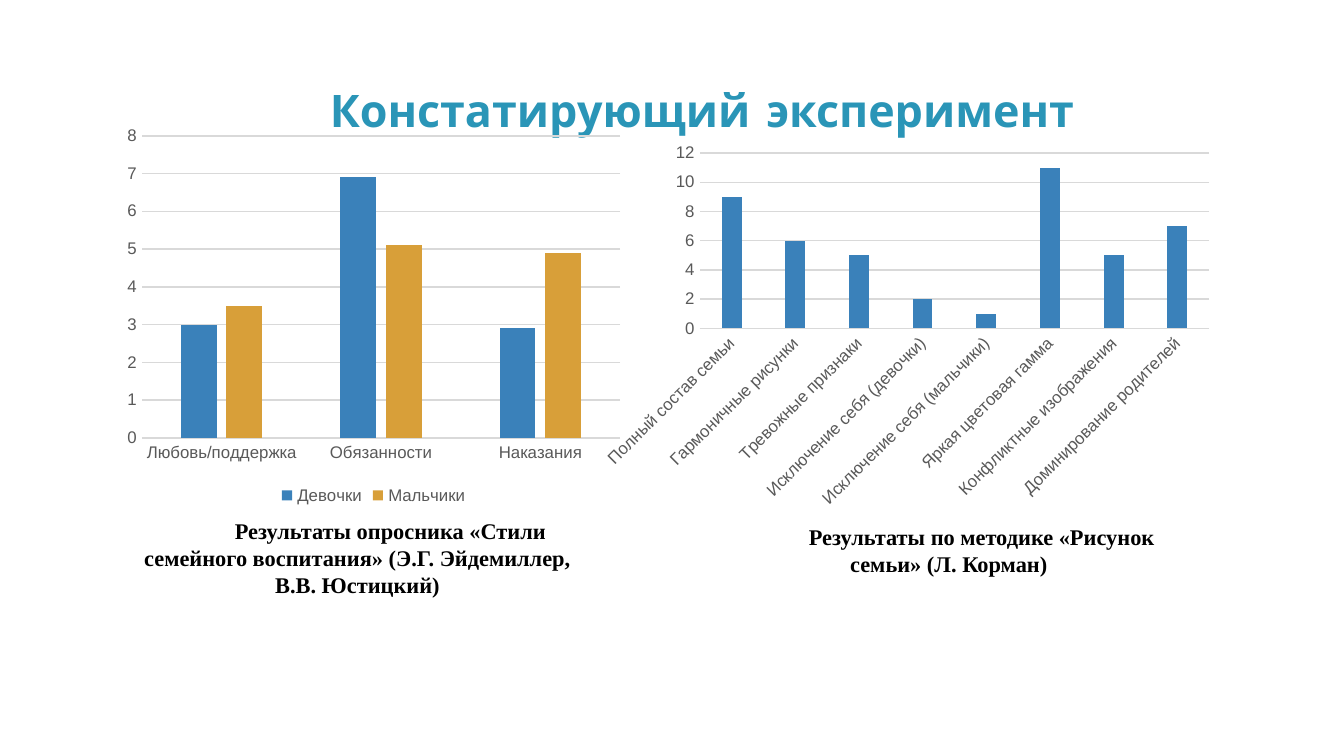
import pptx
import pptx.chart.data
import pptx.dml.color
import pptx.enum.chart
import pptx.enum.text
import pptx.util

BLUE, GOLD = "3A81BA", "D89F39"
GREY, GRID = "595959", "D9D9D9"
TICK_NONE = pptx.enum.chart.XL_TICK_MARK.NONE

presentation = pptx.Presentation()
presentation.slide_width = pptx.util.Inches(10)
presentation.slide_height = presentation.slide_width * 9 // 16
slide = presentation.slides.add_slide(presentation.slide_layouts[6])


def place(left, top, width, height):
    """Turn percentages of the slide's size into a position and size."""
    slide_width, slide_height = presentation.slide_width, presentation.slide_height
    return [int(share * side / 100) for share, side in
            ((left, slide_width), (top, slide_height), (width, slide_width), (height, slide_height))]


def style_font(font, name, size, color, bold=False):
    font.name = name
    font.size = pptx.util.Pt(size)
    font.bold = bold
    font.color.rgb = pptx.dml.color.RGBColor.from_string(color)


# Title, behind the charts
title_box = slide.shapes.add_textbox(*place(23.55, 11.5, 75.5, 8.36))
title_frame = title_box.text_frame
title_frame.word_wrap = True
title_frame.vertical_anchor = pptx.enum.text.MSO_ANCHOR.BOTTOM
title_frame.margin_left = title_frame.margin_right = pptx.util.Inches(0.1)
title_frame.margin_top = title_frame.margin_bottom = pptx.util.Inches(0.1)
title_run = title_frame.paragraphs[0].add_run()
title_run.text = "Констатирующий эксперимент"
style_font(title_run.font, "Comic Neue", 24, "2A95B7", bold=True)

# Panels: chart place, categories, series with colours, axis top, axis step,
# label angle, caption place, caption
panels = [
    (place(8.7, 15.64, 38.2, 51.91),
     ["Любовь/поддержка", "Обязанности", "Наказания"],
     [("Девочки", [3, 6.9, 2.9], BLUE), ("Мальчики", [3.5, 5.1, 4.9], GOLD)],
     8, 1, 0,
     place(8.7, 67.56, 35.8, 12.62),
     "Результаты опросника «Стили семейного воспитания» (Э.Г. Эйдемиллер, В.В. Юстицкий)"),
    (place(44, 17.96, 46.9, 50.31),
     ["Полный состав семьи", "Гармоничные рисунки", "Тревожные признаки",
      "Исключение себя (девочки)", "Исключение себя (мальчики)", "Яркая цветовая гамма",
      "Конфликтные изображения", "Доминирование родителей"],
     [("Series 1", [9, 6, 5, 2, 1, 11, 5, 7], BLUE)],
     12, 2, -45,
     place(52.7, 68.3, 35.8, 8.89),
     "Результаты по методике «Рисунок семьи» (Л. Корман)"),
]
for (position, categories, series_list, top_value, step, angle,
     caption_position, caption) in panels:
    data = pptx.chart.data.CategoryChartData(number_format="General")
    data.categories = categories
    for name, values, color in series_list:
        data.add_series(name, values)
    chart = slide.shapes.add_chart(
        pptx.enum.chart.XL_CHART_TYPE.COLUMN_CLUSTERED, *position, data).chart
    style_font(chart.font, "Arial", 10, "000000")
    chart.has_title = False

    plot = chart.plots[0]
    plot.gap_width, plot.overlap = 219, -27
    plot.vary_by_categories = False
    for series, (name, values, color) in zip(plot.series, series_list):
        series.format.fill.solid()
        series.format.fill.fore_color.rgb = pptx.dml.color.RGBColor.from_string(color)

    category_axis, value_axis = chart.category_axis, chart.value_axis
    for axis in (category_axis, value_axis):
        axis.major_tick_mark = axis.minor_tick_mark = TICK_NONE
        style_font(axis.tick_labels.font, "Arial", 9, GREY)
    value_axis.minimum_scale, value_axis.maximum_scale = 0, top_value
    value_axis.major_unit = step
    value_axis.has_major_gridlines = True
    value_axis.format.line.fill.background()
    for line in (category_axis.format.line, value_axis.major_gridlines.format.line):
        line.color.rgb = pptx.dml.color.RGBColor.from_string(GRID)
        line.width = pptx.util.Pt(0.75)
    if angle:
        body = category_axis._element.txPr.bodyPr
        body.set("rot", str(angle * 60000))
        body.set("vert", "horz")

    chart.has_legend = len(series_list) > 1
    if chart.has_legend:
        chart.legend.position = pptx.enum.chart.XL_LEGEND_POSITION.BOTTOM
        chart.legend.include_in_layout = False
        style_font(chart.legend.font, "Arial", 9, GREY)

    caption_frame = slide.shapes.add_textbox(*caption_position).text_frame
    caption_frame.word_wrap = True
    caption_frame.auto_size = pptx.enum.text.MSO_AUTO_SIZE.SHAPE_TO_FIT_TEXT
    paragraph = caption_frame.paragraphs[0]
    paragraph.alignment = pptx.enum.text.PP_ALIGN.CENTER
    properties = paragraph._p.get_or_add_pPr()
    properties.set("marL", "0")
    properties.set("indent", str(pptx.util.Inches(0.49)))
    run = paragraph.add_run()
    run.text = caption
    style_font(run.font, "Times New Roman", 12, "000000", bold=True)

presentation.save("out.pptx")
